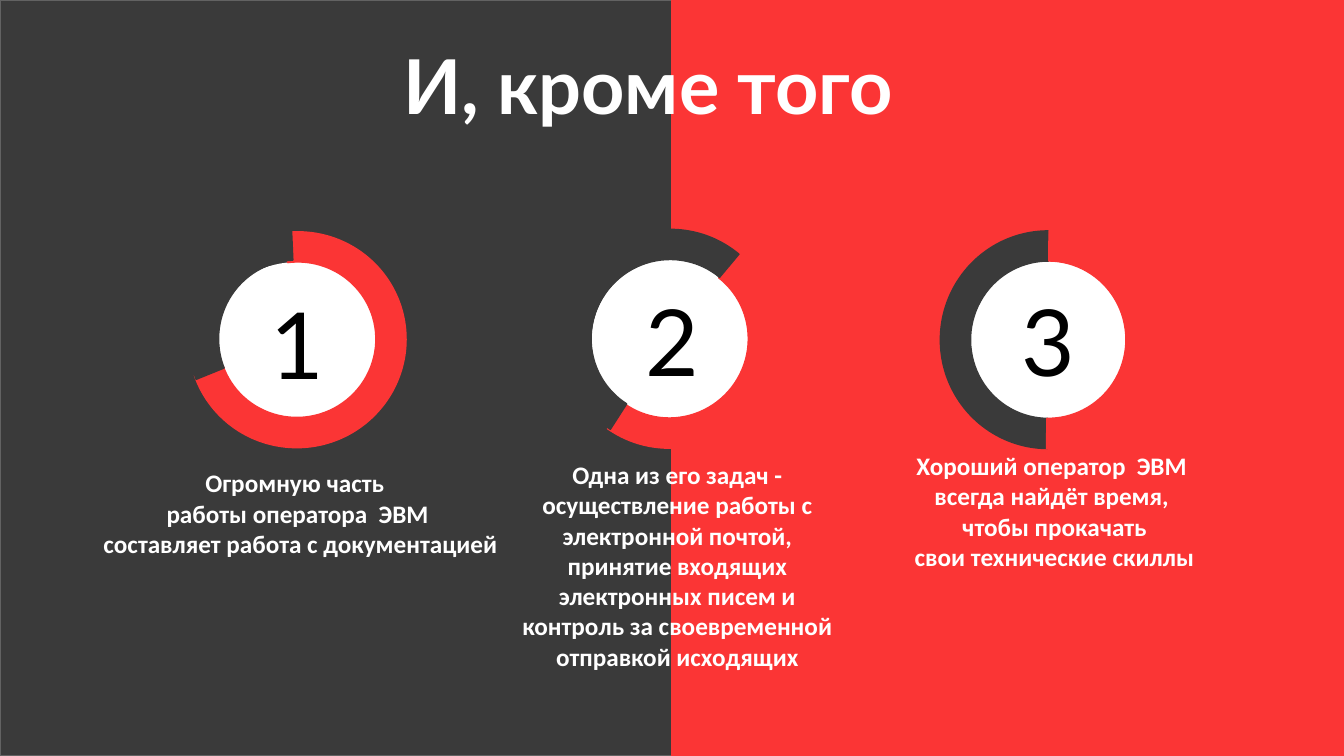
"""Build a slide of three numbered rings on a two-colour background."""
from pptx import Presentation
from pptx import util as u
from pptx.dml.color import RGBColor
from pptx.enum import shapes, text

DARK, RED, WHITE, BLACK = "3A3A3A", "FB3535", "FFFFFF", "000000"
KIND = shapes.MSO_SHAPE


def draw(kind, box, fill, edge=None):
    item = slide.shapes.add_shape(kind, *map(u.Pt, box))
    item.shadow.inherit = False
    item.fill.solid()
    item.fill.fore_color.rgb = RGBColor.from_string(fill)
    if edge:
        item.line.color.rgb = RGBColor.from_string(edge)
        item.line.width = u.Pt(1)
    else:
        item.line.fill.background()
    return item


def write(frame, lines, font, size, color, bold):
    for i, line in enumerate(lines):
        para = frame.paragraphs[0] if i == 0 else frame.add_paragraph()
        para.alignment = text.PP_ALIGN.CENTER
        run = para.add_run()
        run.text = line
        run.font.name = font
        run.font.size = u.Pt(size)
        run.font.bold = bold
        run.font.color.rgb = RGBColor.from_string(color)


deck = Presentation()
deck.slide_width, deck.slide_height = u.Pt(960), u.Pt(540)
slide = deck.slides.add_slide(deck.slide_layouts[6])

draw(KIND.RECTANGLE, (0, 0, 480, 540), DARK, "626262")
draw(KIND.RECTANGLE, (480, 0, 480, 540), RED, RED)

discs = [
    ("1", 149, 187.2, 126.7),
    ("3", 691.2, 185, 115.2),
    ("2", 422.6, 185, 115.2),
]
for digit, left, top, width in discs:
    disc = draw(KIND.OVAL, (left, top, width, 115.2), WHITE)
    disc.text_frame.vertical_anchor = text.MSO_ANCHOR.MIDDLE
    write(disc.text_frame, [digit], "Lato", 66, BLACK, False)

arcs = [
    (134.6, 165.6, 163.3, 59.74, RED),
    (671, 165.6, 272.9, 106.56, DARK),
    (401, 165.6, 127.6, 108.26, RED),
    (400.3, 164.2, 312.3, 102.25, DARK),
    (133.9, 164.9, 270, 148.74, DARK),
    (671, 165.6, 93.4, 106.2, RED),
]
for left, top, turn, start, color in arcs:
    arc = draw(KIND.BLOCK_ARC, (left, top, 155.5, 154.1), color, color)
    arc.rotation = turn
    for i, value in enumerate((start, 214.53, 0.14)):
        arc.adjustments[i] = value

labels = [
    ((243.4, 24.5, 439.2, 72.7), "Lato", 54, False, ["И, кроме того"]),
    ((-27.4, 330.5, 480, 72.7), "Calibri", 18, True, [
        "Огромную часть ",
        "работы оператора  ЭВМ",
        " составляет работа с документацией",
    ]),
    ((363.6, 324.7, 240.5, 181.4), "Calibri", 18, True, [
        "Одна из его задач - осуществление работы с электронной почтой, "
        "принятие входящих электронных писем и контроль за "
        "своевременной отправкой исходящих",
    ]),
    ((511.2, 318.2, 480, 94.3), "Calibri", 18, True, [
        "Хороший оператор  ЭВМ",
        "всегда найдёт время,",
        " чтобы прокачать",
        " свои технические скиллы",
    ]),
]
for box, font, size, wrap, lines in labels:
    frame = slide.shapes.add_textbox(*map(u.Pt, box)).text_frame
    frame.word_wrap = wrap
    frame.auto_size = text.MSO_AUTO_SIZE.SHAPE_TO_FIT_TEXT
    write(frame, lines, font, size, WHITE, True)

deck.save("out.pptx")
